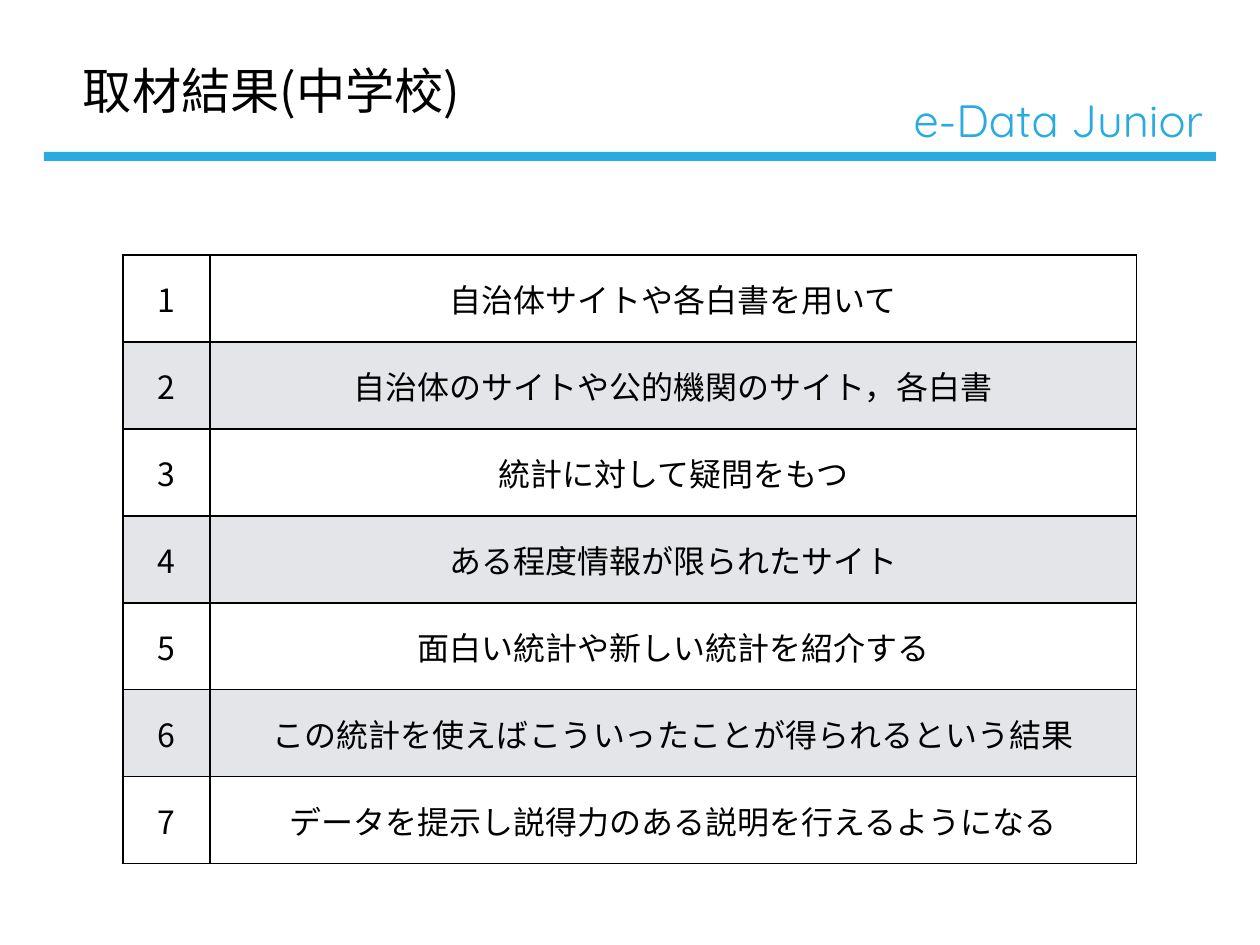
from dataclasses import dataclass

from lxml import etree
from pptx import Presentation
from pptx import util as u
from pptx.dml import color
from pptx.enum import shapes, text
from pptx.oxml import ns

EMU_PER_PX = 914400 / 88.6


def px(length):
    return u.Emu(round(length * EMU_PER_PX))


@dataclass(frozen=True)
class Theme:
    accent: str = "29ABE2"
    ink: str = "000000"
    paper: str = "FFFFFF"
    band: str = "E3E5E8"
    body_font: str = "Noto Sans CJK JP"
    brand_font: str = "Quicksand"
    title_size: float = 40
    brand_size: float = 36.8
    table_size: float = 26
    border: float = 1
    inset: int = 5


def rgb(value):
    return color.RGBColor.from_string(value)


def write(frame, words, *, font, size, ink, align=text.PP_ALIGN.LEFT, spacing=1.0):
    """Put one formatted paragraph into a text frame."""
    para = frame.paragraphs[0]
    para.alignment = align
    para.line_spacing = spacing
    para.space_before = u.Pt(0)
    span = para.add_run()
    span.text = words
    span.font.name = font
    span.font.size = u.Pt(size)
    span.font.color.rgb = rgb(ink)
    # East Asian glyphs take their own typeface entry
    latin = span.font._element.find(ns.qn("a:latin"))
    east_asian = etree.Element(ns.qn("a:ea"), typeface=font)
    latin.addnext(east_asian)


class SlideBuilder:
    def __init__(self, page, theme):
        self.page = page
        self.theme = theme

    def place(self, box, left, top, width, height):
        box.left, box.top = px(left), px(top)
        box.width, box.height = px(width), px(height)

    def set_frame(self, frame, anchor):
        frame.word_wrap = True
        frame.auto_size = text.MSO_AUTO_SIZE.NONE
        frame.vertical_anchor = anchor
        inset = px(self.theme.inset)
        frame.margin_left = frame.margin_right = inset
        frame.margin_top = frame.margin_bottom = inset

    def bar(self, left, top, width, height, fill):
        box = self.page.shapes.add_shape(
            shapes.MSO_SHAPE.RECTANGLE, px(left), px(top), px(width), px(height))
        box.shadow.inherit = False
        box.fill.solid()
        box.fill.fore_color.rgb = rgb(fill)
        box.line.fill.background()

    def title(self, words, *bounds):
        box = self.page.shapes.title
        self.place(box, *bounds)
        self.set_frame(box.text_frame, text.MSO_ANCHOR.MIDDLE)
        write(box.text_frame, words, font=self.theme.body_font,
              size=self.theme.title_size, ink=self.theme.ink, spacing=0.84)

    def label(self, words, left, top, width, height, **style):
        box = self.page.shapes.add_textbox(px(left), px(top), px(width), px(height))
        self.set_frame(box.text_frame, text.MSO_ANCHOR.BOTTOM)
        write(box.text_frame, words, **style)

    def border(self, cell):
        properties = cell._tc.get_or_add_tcPr()
        for side in ("lnL", "lnR", "lnT", "lnB"):
            line = etree.SubElement(properties, ns.qn(f"a:{side}"),
                                    w=str(u.Pt(self.theme.border)))
            fill = etree.SubElement(line, ns.qn("a:solidFill"))
            etree.SubElement(fill, ns.qn("a:srgbClr"), val=self.theme.ink)

    def table(self, rows, left, top, widths, row_height):
        table = self.page.shapes.add_table(
            len(rows), len(widths), px(left), px(top),
            px(sum(widths)), px(row_height * len(rows))).table
        table.first_row = table.horz_banding = False
        for column, width in zip(table.columns, widths):
            column.width = px(width)
        for index, values in enumerate(rows):
            table.rows[index].height = px(row_height)
            fill = self.theme.band if index % 2 else self.theme.paper
            for cell, words in zip(table.rows[index].cells, values):
                self.table_cell(cell, words, fill)

    def table_cell(self, cell, words, fill):
        self.border(cell)
        cell.fill.solid()
        cell.fill.fore_color.rgb = rgb(fill)
        cell.vertical_anchor = text.MSO_ANCHOR.MIDDLE
        inset = px(self.theme.inset)
        cell.margin_left = cell.margin_right = inset
        cell.margin_top = cell.margin_bottom = inset
        write(cell.text_frame, words, font=self.theme.body_font,
              size=self.theme.table_size, ink=self.theme.ink,
              align=text.PP_ALIGN.CENTER)


FINDINGS = [
    "自治体サイトや各白書を用いて",
    "自治体のサイトや公的機関のサイト，各白書",
    "統計に対して疑問をもつ",
    "ある程度情報が限られたサイト",
    "面白い統計や新しい統計を紹介する",
    "この統計を使えばこういったことが得られるという結果",
    "データを提示し説得力のある説明を行えるようになる",
]


def main():
    theme = Theme()
    deck = Presentation()
    deck.slide_width, deck.slide_height = px(1260), px(945)
    page = deck.slides.add_slide(deck.slide_layouts[5])
    page.background.fill.solid()
    page.background.fill.fore_color.rgb = rgb(theme.paper)
    builder = SlideBuilder(page, theme)

    # Header
    builder.bar(44, 152, 1172, 9, theme.accent)
    builder.label("e-Data Junior", 901, 89, 315, 63, font=theme.brand_font,
                  size=theme.brand_size, ink=theme.accent,
                  align=text.PP_ALIGN.CENTER)
    builder.title("取材結果(中学校)", 78, 65, 391, 59)

    # Numbered findings
    rows = [(str(number), finding) for number, finding in enumerate(FINDINGS, 1)]
    builder.table(rows, 123, 255, (87, 927), 87)

    deck.save("out.pptx")


if __name__ == "__main__":
    main()
